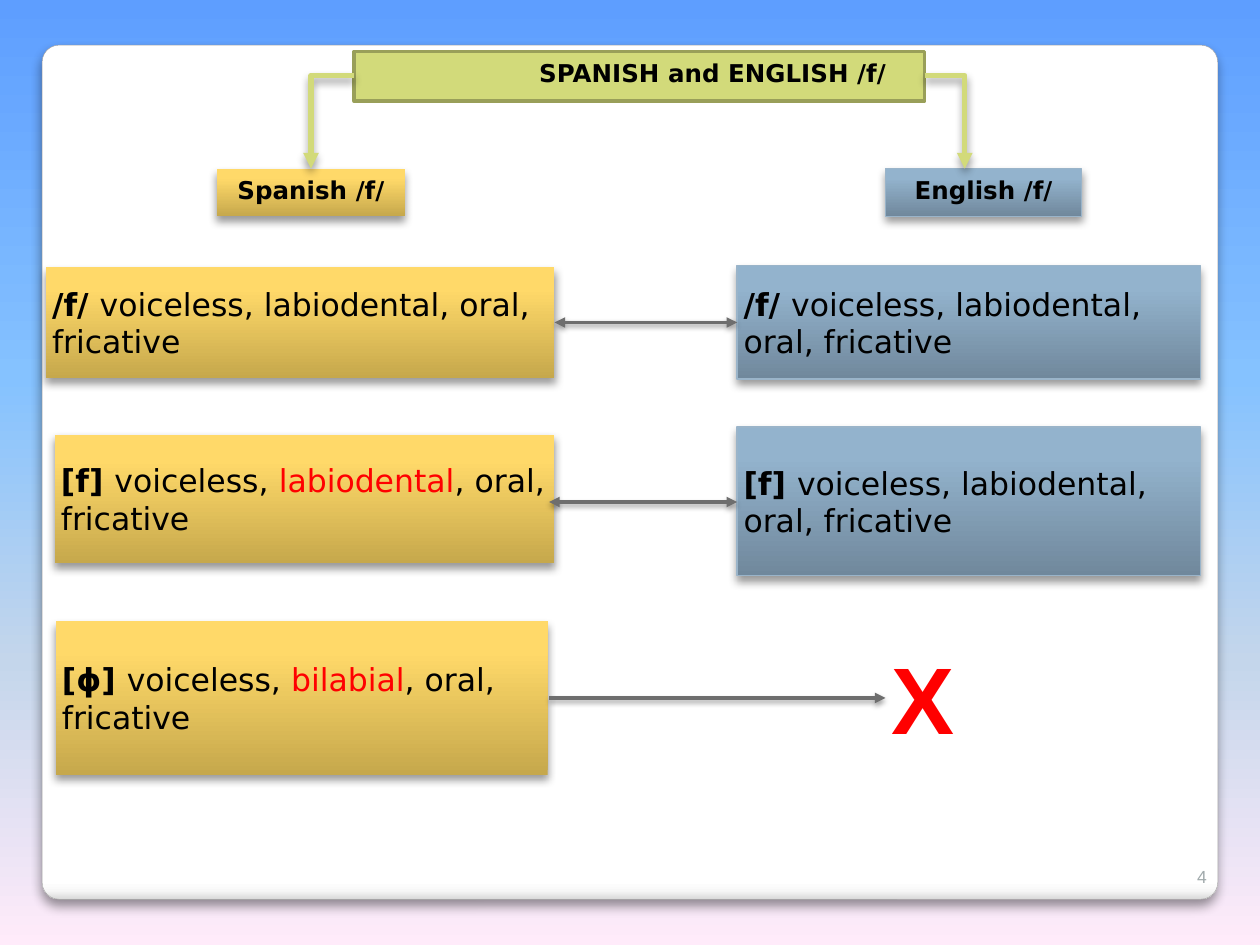
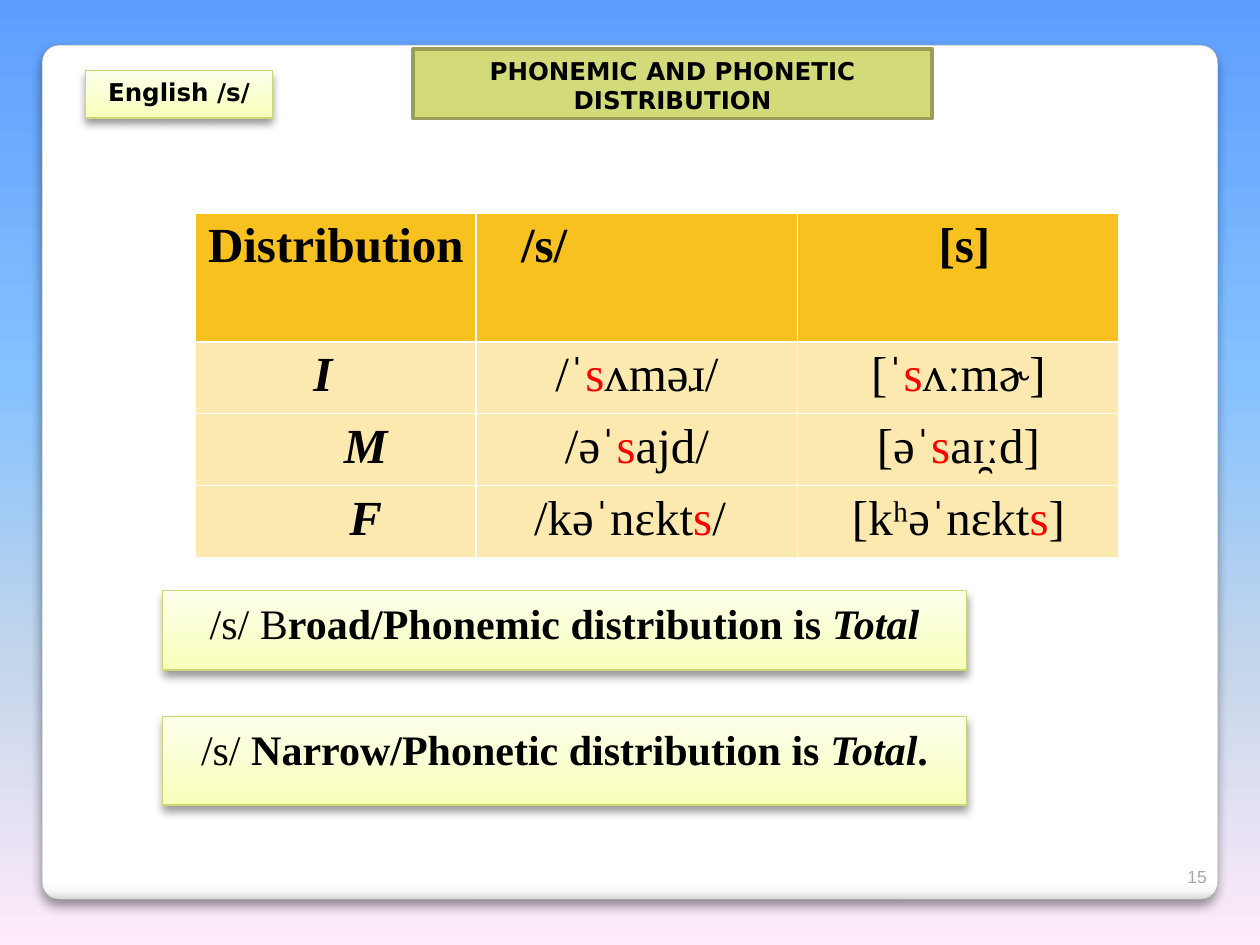
from lxml.etree import SubElement
from pptx import Presentation
from pptx.dml.color import RGBColor
from pptx.enum.shapes import MSO_CONNECTOR, MSO_SHAPE
from pptx.enum.text import MSO_ANCHOR, MSO_AUTO_SIZE, PP_ALIGN
from pptx.oxml.ns import qn
from pptx.util import Cm, Pt

BLACK = RGBColor(0x00, 0x00, 0x00)
RED = RGBColor(0xFF, 0x00, 0x00)
GREEN = RGBColor(0xD2, 0xDA, 0x7A)
OLIVE = RGBColor(0x99, 0x9F, 0x59)
GREY = RGBColor(0x6E, 0x6E, 0x6E)
PALE = RGBColor(0xA1, 0xAA, 0xAC)
EDGE = RGBColor(0xA2, 0xA1, 0xA1)
AMBER = RGBColor(0xF7, 0xC1, 0x20)
CREAM = RGBColor(0xFC, 0xE9, 0xAF)

# Gradient stops, then the outline
SKY = [(0, "5E9EFF"), (40, "85C2FF"), (70, "C4D6EB"), (100, "FFEBFA")]
SHEET = [(0, "FFFFFF"), (98, "FFFFFF"), (99, "F7F7F7"), (100, "D9D9D9")]
GOLD = [(0, "C6A84C"), (80, "FFD969"), (100, "FFDA6B")], None
BLUE = [(0, "70889C"), (80, "93B3CD"), (100, "93B4CF")], RGBColor(0x9A, 0xB4, 0xC9)
LEMON = [(0, "F8FFB8"), (35, "FAFFCC"), (100, "FDFFEB")], RGBColor(0xCF, 0xD7, 0x75)

# Shadow: opacity in percent, blur and distance in points
SOFT = (40, 5, 3)
THIN = (38, 3, 1.6)
DEEP = (42, 6, 4)

SANS, SERIF, PLAIN = "DejaVu Sans", "Times New Roman", "Arial"
PAD = 0.13
LEFT, MID, RIGHT = PP_ALIGN.LEFT, PP_ALIGN.CENTER, PP_ALIGN.RIGHT


def write(frame, runs, size=14, face=SANS, color=BLACK, align=MID,
          anchor=MSO_ANCHOR.TOP, left=PAD):
    """Fill a frame with (text, marks) runs; marks are b, i and r for red."""
    frame.word_wrap = True
    frame.auto_size = MSO_AUTO_SIZE.NONE
    frame.vertical_anchor = anchor
    frame.margin_left = Cm(left)
    frame.margin_right = frame.margin_top = frame.margin_bottom = Cm(PAD)
    para = frame.paragraphs[0]
    para.alignment = align
    for text, marks in runs:
        run = para.add_run()
        run.text = text
        font = run.font
        font.name, font.size = face, Pt(size)
        font.bold, font.italic = "b" in marks, "i" in marks
        font.color.rgb = RED if "r" in marks else color


def paint(props, stops=(), shade=None, ends=()):
    """Set gradient stops, a shadow and arrowheads on a property element."""
    if stops:
        bed = props.find(qn("a:gradFill")).find(qn("a:gsLst"))
        for old in list(bed):
            bed.remove(old)
        for spot, tint in stops:
            stop = SubElement(bed, qn("a:gs"), pos=str(spot * 1000))
            SubElement(stop, qn("a:srgbClr"), val=tint)
    for end in ends:
        SubElement(props.find(qn("a:ln")), qn(end), type="triangle")
    if shade:
        fx = props.find(qn("a:effectLst"))
        if fx is None:
            fx = SubElement(props, qn("a:effectLst"))
        alpha, blur, dist = shade
        cast = SubElement(fx, qn("a:outerShdw"), blurRad=str(Pt(blur)),
                          dist=str(Pt(dist)), dir="5400000", rotWithShape="0")
        tint = SubElement(cast, qn("a:srgbClr"), val="000000")
        SubElement(tint, qn("a:alpha"), val=str(alpha * 1000))


deck = Presentation()
deck.slide_width, deck.slide_height = Cm(25.4), Cm(19.05)
layout = deck.slide_layouts[5]

# Shared background and white sheet
back = deck.slide_master.background.fill
back.gradient()
back.gradient_angle = 270
paint(deck.slide_master.element.find(".//" + qn("p:bgPr")), SKY)

first, second = [deck.slides.add_slide(layout) for _ in range(2)]
sheet = first.shapes.add_shape(
    MSO_SHAPE.ROUNDED_RECTANGLE, Cm(0.85), Cm(0.91), Cm(23.7), Cm(17.22))
sheet.adjustments[0] = 0.02
sheet.fill.gradient()
sheet.fill.gradient_angle = 270
sheet.line.color.rgb = EDGE
sheet.line.width = Pt(0.25)
sheet.shadow.inherit = False
paint(sheet.element.spPr, SHEET, DEEP)
layout.shapes.element.insert(2, sheet.element)

# Titles and slide numbers
heads = [
    (first, "SPANISH and ENGLISH /f/", (7.14, 1.04, 11.5, 1), LEFT, 3.73, "4"),
    (second, "PHONEMIC AND PHONETIC DISTRIBUTION", (8.33, 0.99, 10.46, 1.4),
     MID, PAD, "15"),
]
for slide, text, place, align, left, page in heads:
    title = slide.shapes.title
    title.left, title.top, title.width, title.height = map(Cm, place)
    title.fill.solid()
    title.fill.fore_color.rgb = GREEN
    title.line.color.rgb = OLIVE
    title.line.width = Pt(2)
    write(title.text_frame, [(text, "b")], align=align, left=left)
    num = slide.shapes.add_textbox(Cm(23.19), Cm(17.37), Cm(1.27), Cm(0.64))
    write(num.text_frame, [(page, "")], 10, PLAIN, PALE, RIGHT, MSO_ANCHOR.BOTTOM)

# Shaded boxes of both slides
TAG = dict(size=14)
SOUND = dict(size=18, align=LEFT, anchor=MSO_ANCHOR.MIDDLE)
NOTE = dict(size=24, face=SERIF)
same = ("voiceless, labiodental, oral, fricative", "")
start, rest = ("voiceless, ", ""), (", oral, fricative", "")
boxes = [
    (first, (4.37, 3.4, 3.8, 0.96), GOLD, TAG, [("Spanish /f/", "b")]),
    (first, (17.85, 3.4, 3.96, 0.96), BLUE, TAG, [("English /f/", "b")]),
    (first, (0.92, 5.38, 10.26, 2.24), GOLD, SOUND, [("/f/ ", "b"), same]),
    (first, (1.1, 8.76, 10.08, 2.6), GOLD, SOUND,
     [("[f] ", "b"), start, ("labiodental", "r"), rest]),
    (first, (1.12, 12.52, 9.92, 3.1), GOLD, SOUND,
     [("[ɸ] ", "b"), start, ("bilabial", "r"), rest]),
    (first, (14.86, 5.36, 9.34, 2.28), BLUE, SOUND, [("/f/ ", "b"), same]),
    (first, (14.86, 8.61, 9.34, 3), BLUE, SOUND, [("[f] ", "b"), same]),
    (second, (1.73, 1.42, 3.76, 0.96), LEMON, TAG, [("English /s/", "b")]),
    (second, (3.28, 11.91, 16.2, 1.6), LEMON, NOTE,
     [("/s/ B", ""), ("road/Phonemic distribution is ", "b"), ("Total", "bi")]),
    (second, (3.28, 14.45, 16.2, 1.78), LEMON, NOTE,
     [("/s/ ", ""), ("Narrow/Phonetic distribution is ", "b"),
      ("Total", "bi"), (".", "b")]),
]
for slide, place, (stops, edge), style, runs in boxes:
    box = slide.shapes.add_shape(MSO_SHAPE.RECTANGLE, *map(Cm, place))
    box.fill.gradient()
    box.fill.gradient_angle = 90
    if edge:
        box.line.color.rgb = edge
        box.line.width = Pt(0.75)
    else:
        box.line.fill.background()
    box.shadow.inherit = False
    paint(box.element.spPr, stops, SOFT)
    write(box.text_frame, runs, **style)

# Bent arrows from the title to the two languages
for side, turn in [(7.14, 6.27), (18.64, 19.45)]:
    pen = first.shapes.build_freeform(Cm(side), Cm(1.52))
    pen.add_line_segments([(Cm(turn), Cm(1.52)), (Cm(turn), Cm(3.4))], close=False)
    bend = pen.convert_to_shape()
    bend.fill.background()
    bend.line.color.rgb = GREEN
    bend.line.width = Pt(3)
    bend.shadow.inherit = False
    paint(bend.element.spPr, shade=SOFT, ends=["a:tailEnd"])

# Straight arrows between matching sounds
both = ["a:headEnd", "a:tailEnd"]
for x, end, y, ends in [(11.18, 14.86, 6.5, both), (11.07, 14.86, 10.12, both),
                        (11.07, 17.85, 14.07, both[1:])]:
    link = first.shapes.add_connector(
        MSO_CONNECTOR.STRAIGHT, Cm(x), Cm(y), Cm(end), Cm(y))
    link.line.color.rgb = GREY
    link.line.width = Pt(2)
    paint(link.element.spPr, shade=THIN, ends=ends)

cross = first.shapes.add_textbox(Cm(17.85), Cm(12.78), Cm(1.85), Cm(2.57))
write(cross.text_frame, [("X", "br")], 54, PLAIN, align=LEFT)

# Distribution table: each cell holds its runs and a shift off centre
s = ("s", "r")
rows = [
    [([("Distribution", "b")], 0), ([("/s/", "b")], -1.87), ([("[s]", "b")], 0.12)],
    [([("I", "bi")], -0.26), ([("/ˈ", ""), s, ("ʌməɹ/", "")], 0),
     ([("[ˈ", ""), s, ("ʌːmɚ]", "")], 0)],
    [([("M", "bi")], 0.6), ([("/əˈ", ""), s, ("ajd/", "")], 0),
     ([("[əˈ", ""), s, ("aɪ̯ːd]", "")], 0)],
    [([("F", "bi")], 0.6), ([("/kəˈnɛkt", ""), s, ("/", "")], -0.14),
     ([("[kʰəˈnɛkt", ""), s, ("]", "")], 0)],
]
table = second.shapes.add_table(
    4, 3, Cm(3.94), Cm(4.29), Cm(18.62), Cm(6.95)).table
table.horz_banding = False
for col, width in zip(table.columns, (5.66, 6.48, 6.48)):
    col.width = Cm(width)
for r, row in enumerate(rows):
    table.rows[r].height = Cm(1.45 if r else 2.6)
    for c, (runs, shift) in enumerate(row):
        cell = table.cell(r, c)
        cell.fill.solid()
        cell.fill.fore_color.rgb = CREAM if r else AMBER
        write(cell.text_frame, runs, 28, SERIF)
        cell.margin_top = cell.margin_bottom = Cm(PAD)
        cell.margin_left = Cm(PAD + max(0, 2 * shift))
        cell.margin_right = Cm(PAD + max(0, -2 * shift))

deck.save("out.pptx")
